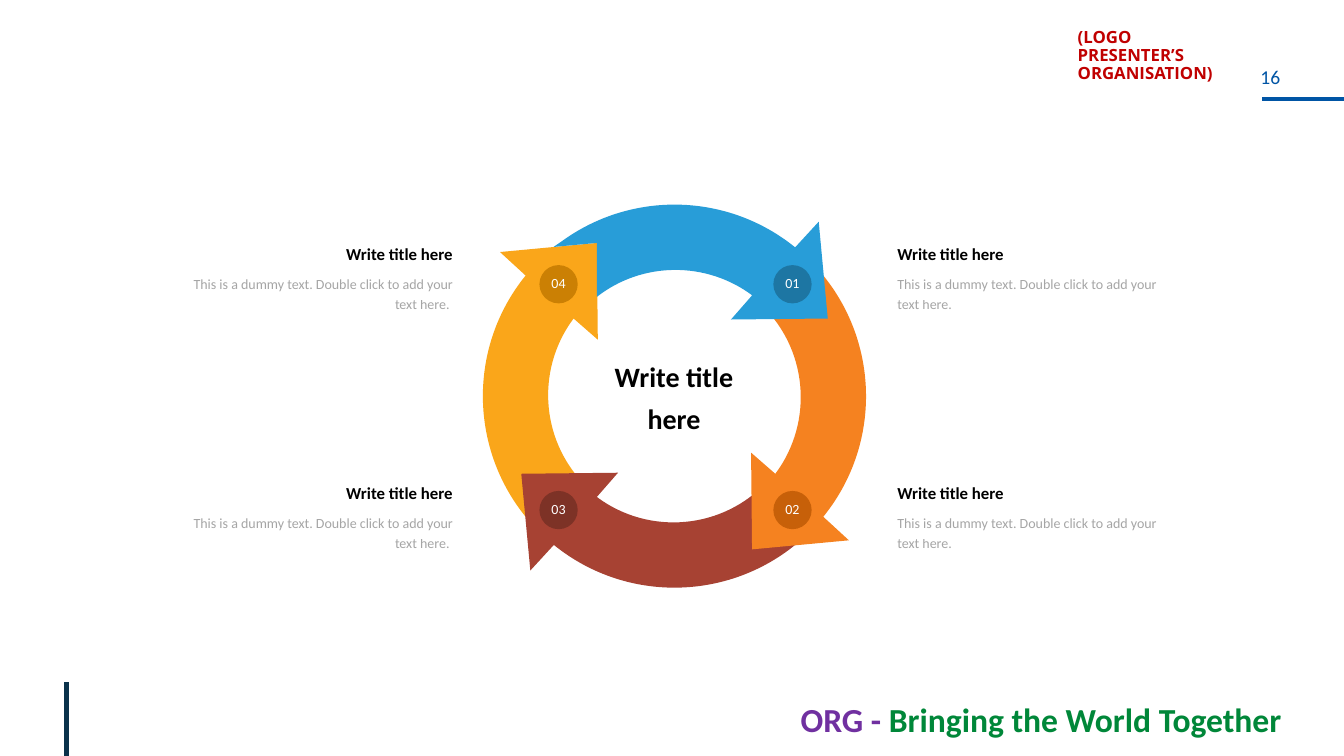
from math import cos, radians, sin, tan

from lxml import etree
from pptx import Presentation
from pptx.dml.color import RGBColor
from pptx.enum.shapes import MSO_CONNECTOR, MSO_SHAPE
from pptx.enum.text import MSO_ANCHOR, PP_ALIGN
from pptx.oxml.ns import qn
from pptx.util import Inches, Pt

LEFT, CENTER, RIGHT = PP_ALIGN.LEFT, PP_ALIGN.CENTER, PP_ALIGN.RIGHT
TOP, MIDDLE = MSO_ANCHOR.TOP, MSO_ANCHOR.MIDDLE
STRAIGHT, OVAL = MSO_CONNECTOR.STRAIGHT, MSO_SHAPE.OVAL

WIDTH, HEIGHT = 13.33, 7.5
COLORS = {
    "blue": "289DD8", "orange": "F58220", "red": "A74233", "yellow": "FAA61A",
    "blue_dark": "1D76A3", "orange_dark": "C76009", "red_dark": "7D3226",
    "yellow_dark": "CB8004", "rule": "0055A5", "navy": "0A324B",
    "purple": "7030A0", "green": "008739", "crimson": "C00000",
    "black": "000000", "grey": "808080", "white": "FFFFFF",
}
STEPS = ["blue", "orange", "red", "yellow"]
OUTER, INNER = 1.9, 1.25
TILT = 48
HEAD = [(1.2, -1.48), (1.43, -1.73), (1.52, -0.77), (0.56, -0.76), (0.77, -1.0)]
NOTCH = [(-0.77, -1.52), (-1.2, -1.48)]


def color(name):
    return RGBColor.from_string(COLORS[name])


def write(frame, paragraphs, align=LEFT, anchor=TOP, margins=(0.1, 0.05)):
    across, down = (Inches(size) for size in margins)
    settings = {
        "word_wrap": True, "vertical_anchor": anchor,
        "margin_left": across, "margin_right": across,
        "margin_top": down, "margin_bottom": down,
    }
    for key, value in settings.items():
        setattr(frame, key, value)
    for index, (spans, spacing) in enumerate(paragraphs):
        para = frame.add_paragraph() if index else frame.paragraphs[0]
        para.alignment = align
        para.line_spacing = spacing
        para.space_before = Pt(6 if index else 0)
        for text, name, style in spans:
            span = para.add_run()
            span.text = text
            for key, value in {"name": "Calibri", **style}.items():
                setattr(span.font, key, value)
            span.font.color.rgb = color(name)


def add_text(page, box, paragraphs, **layout):
    shape = page.shapes.add_textbox(*(Inches(size) for size in box))
    write(shape.text_frame, paragraphs, **layout)
    return shape


def add_rule(page, ends, name):
    rule = page.shapes.add_connector(STRAIGHT, *(Inches(end) for end in ends))
    rule.line.color.rgb = color(name)
    rule.line.width = Pt(3)
    etree.SubElement(rule._element.spPr, qn("a:effectLst"))


def paint(shape, name):
    shape.shadow.inherit = False
    shape.fill.solid()
    shape.fill.fore_color.rgb = color(name)
    shape.line.fill.background()


def turn(point, degrees):
    x, y = point
    c, s = cos(radians(degrees)), sin(radians(degrees))
    return x * c - y * s, x * s + y * c


def on_circle(radius, angle):
    return turn((radius, 0), angle)


def curve(radius, start, end):
    reach = radius * 4 / 3 * tan(radians(end - start) / 4)
    return [turn((radius, reach), start), turn((radius, -reach), end),
            on_circle(radius, end)]


def samples(radius, start, end, count=60):
    return [on_circle(radius, start + (end - start) * i / count) for i in range(count + 1)]


def add_arrow(page, center, turns, name):
    begin, finish, notch = (-126, -128, NOTCH) if turns == 0 else (-138, -138, [])
    outer, inner = (OUTER, begin, -51), (INNER, -52, finish)
    steps = [("moveTo", [on_circle(OUTER, begin)]), ("cubicBezTo", curve(*outer))]
    steps += [("lnTo", [point]) for point in HEAD]
    steps += [("cubicBezTo", curve(*inner))] + [("lnTo", [point]) for point in notch]

    angle = 90 * turns + TILT
    extent = [turn(point, angle)
              for point in samples(*outer) + HEAD + samples(*inner) + notch]
    xs, ys = zip(*extent)
    left, top = min(xs), min(ys)
    width, height = max(xs) - left, max(ys) - top

    builder = page.shapes.build_freeform(0, 0, scale=1.0)
    builder.add_line_segments([(Inches(1), 0), (0, Inches(1))], close=True)
    arrow = builder.convert_to_shape()
    middle = turn((left + width / 2, top + height / 2), -TILT)
    frame = {
        "left": center[0] + middle[0] - width / 2,
        "top": center[1] + middle[1] - height / 2,
        "width": width, "height": height,
    }
    for key, value in frame.items():
        setattr(arrow, key, Inches(value))
    arrow.rotation = 360 - TILT

    outline = next(arrow._element.iter(qn("a:path")))
    for child in list(outline):
        outline.remove(child)
    outline.set("w", str(Inches(width)))
    outline.set("h", str(Inches(height)))
    for tag, points in steps:
        step = etree.SubElement(outline, qn("a:" + tag))
        for point in points:
            x, y = turn(point, angle)
            spot = etree.SubElement(step, qn("a:pt"))
            spot.set("x", str(Inches(x - left)))
            spot.set("y", str(Inches(y - top)))
    etree.SubElement(outline, qn("a:close"))
    paint(arrow, name)


def add_badge(page, middle, number, name):
    size = 0.38
    box = (middle[0] - size / 2, middle[1] - size / 2, size, size)
    badge = page.shapes.add_shape(OVAL, *(Inches(length) for length in box))
    paint(badge, name)
    label = [(f"{number:02d}", "white", {"size": Pt(10)})]
    write(badge.text_frame, [(label, 0.8)], CENTER, MIDDLE, (0, 0))


def add_cycle(page, box):
    left, top, width, height = box
    center = (left + width / 2, top + height / 2)
    for turns in reversed(range(len(STEPS))):
        add_arrow(page, center, turns, STEPS[turns])
    for turns, name in enumerate(STEPS):
        side = 1 if turns < 2 else -1
        level = 1 if turns in (1, 2) else -1
        middle = (center[0] + 0.01 + side * 1.16, center[1] + 0.01 + level * 1.12)
        add_badge(page, middle, turns + 1, name + "_dark")
    bold = {"size": Pt(20), "bold": True}
    lines = [([(text, "black", bold)], 1.0) for text in ("Write title", "here")]
    add_text(page, (center[0] - 0.76, center[1] - 0.41, 1.51, 0.86), lines, align=CENTER)


def add_caption(page, box, align):
    ending = " " if align == RIGHT else ""
    heading = [("Write title here", "black", {"size": Pt(12), "bold": True})]
    body = [("This is a dummy text. Double click to add your text here." + ending,
             "grey", {"size": Pt(10)})]
    caption = add_text(page, box, [(heading, 1.2), (body, 1.2)],
                       align=align, margins=(0, 0.05))
    for grey in caption._element.iter(qn("a:srgbClr")):
        if grey.get("val") == COLORS["grey"]:
            etree.SubElement(grey, qn("a:alpha")).set("val", "70000")


def add_captions(page, box):
    left, top, width, height = box
    column, row = 2.6, 0.83
    for x, align in ((left + width - column, LEFT), (left, RIGHT)):
        for y in (top, top + height - row):
            add_caption(page, (x, y, column, row), align)


def add_header(page, box):
    left, top, width, height = box
    logo = [("(LOGO PRESENTER’S ORGANISATION)", "crimson",
             {"name": "Open Sans", "size": Pt(12), "bold": True})]
    add_text(page, (left, top, 1.59, height), [(logo, 0.9)])
    number = [("16", "rule", {"size": Pt(14)})]
    add_text(page, (left + 1.41, top + 0.4, 1.2, 0.33), [(number, 1.0)],
             align=CENTER, margins=(0, 0))
    line_y = top + 0.74
    add_rule(page, (left + 1.93, line_y, left + width, line_y), "rule")


def add_footer(page, box):
    left, top, width, height = box
    add_rule(page, (left, top, left, top + height), "navy")
    bold = {"size": Pt(24), "bold": True}
    tagline = [("ORG - ", "purple", bold), ("Bringing the World Together", "green", bold)]
    add_text(page, (left + width - 5.85, top + 0.11, 5.69, 0.5),
             [(tagline, 1.0)], align=CENTER)


def main():
    deck = Presentation()
    deck.slide_width, deck.slide_height = Inches(WIDTH), Inches(HEIGHT)
    page = deck.slides.add_slide(deck.slide_layouts[6])
    add_header(page, (10.59, 0.24, WIDTH - 10.59, 1.01))
    add_footer(page, (0.66, 6.77, WIDTH - 0.66, HEIGHT - 6.77))
    add_captions(page, (1.89, 2.33, 9.61, 3.2))
    add_cycle(page, (4.79, 2.03, 3.8, 3.8))
    deck.save("out.pptx")


if __name__ == "__main__":
    main()
